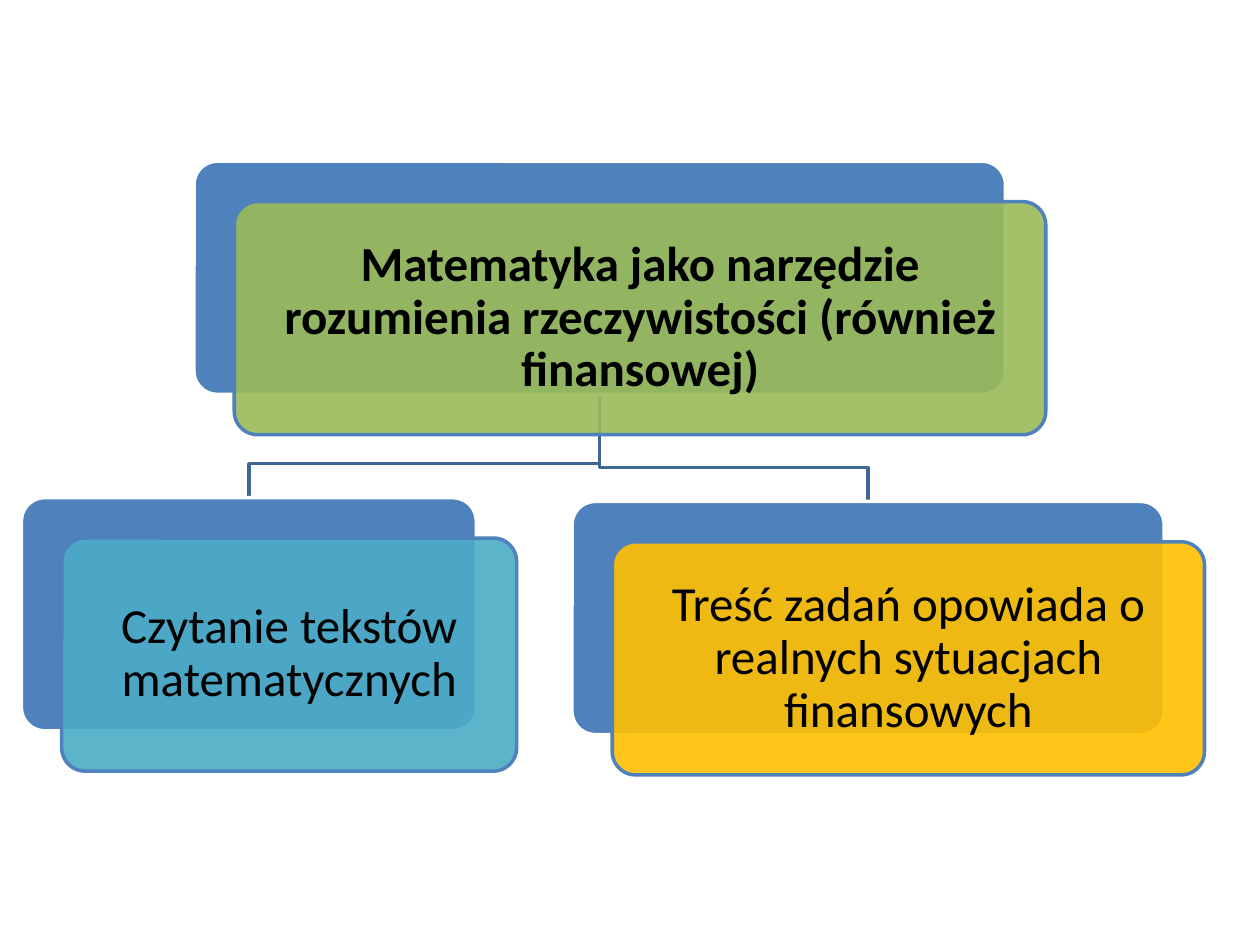
from dataclasses import dataclass

from lxml import etree
from pptx import Presentation
from pptx.dml.color import RGBColor
from pptx.enum.shapes import MSO_SHAPE
from pptx.enum.text import MSO_ANCHOR, PP_ALIGN
from pptx.oxml.ns import qn
from pptx.util import Inches, Pt

ROUNDED = MSO_SHAPE.ROUNDED_RECTANGLE
MIDDLE = MSO_ANCHOR.MIDDLE
CENTER = PP_ALIGN.CENTER

BLACK = RGBColor(0x00, 0x00, 0x00)
WHITE = RGBColor(0xFF, 0xFF, 0xFF)
BLUE = RGBColor(0x4F, 0x81, 0xBD)
DARK_BLUE = RGBColor(0x3F, 0x67, 0x97)
GREEN = RGBColor(0x9B, 0xBB, 0x59)
TEAL = RGBColor(0x4B, 0xAC, 0xC6)
GOLD = RGBColor(0xFF, 0xC0, 0x00)

CARD_HEIGHT = 1.85
CARD_OFFSET = 0.32
BRANCH_DROP = 0.27
INSET = Inches(0.12)
LINE_WIDTH = Pt(2)
FONT_SIZE = 28


@dataclass(frozen=True)
class Node:
    text: str
    left: float
    top: float
    width: float
    color: RGBColor
    bold: bool = False

    @property
    def center(self) -> float:
        return self.left + self.width / 2

    @property
    def bottom(self) -> float:
        return self.top + CARD_HEIGHT


ROOT = Node(
    "Matematyka jako narzędzie rozumienia rzeczywistości (również finansowej)",
    1.54, 1.28, 6.44, GREEN, bold=True,
)
CHILDREN = [
    Node("Treść zadań opowiada o realnych sytuacjach finansowych", 4.54, 3.98, 4.7, GOLD),
    Node("Czytanie tekstów matematycznych", 0.17, 3.95, 3.61, TEAL),
]


def draw_branch(page, parent: Node, child: Node) -> None:
    turn = child.top - BRANCH_DROP
    builder = page.shapes.build_freeform(
        Inches(parent.center), Inches(parent.bottom), scale=1.0
    )
    corners = [(parent.center, turn), (child.center, turn), (child.center, child.top)]
    builder.add_line_segments([(Inches(x), Inches(y)) for x, y in corners], close=False)
    branch = builder.convert_to_shape()
    branch.shadow.inherit = False
    branch.fill.background()
    branch.line.color.rgb = DARK_BLUE
    branch.line.width = LINE_WIDTH


def draw_card(page, node: Node, offset: float, fill: RGBColor, outline: RGBColor):
    card = page.shapes.add_shape(
        ROUNDED,
        Inches(node.left + offset), Inches(node.top + offset),
        Inches(node.width), Inches(CARD_HEIGHT),
    )
    card.adjustments[0] = 0.1
    card.shadow.inherit = False
    card.fill.solid()
    card.fill.fore_color.rgb = fill
    card.line.color.rgb = outline
    card.line.width = LINE_WIDTH
    return card


def set_opacity(card, percent: int) -> None:
    color = card.fill._xPr.find(qn("a:solidFill"))[0]
    etree.SubElement(color, qn("a:alpha")).set("val", str(percent * 1000))


def write_label(card, node: Node) -> None:
    frame = card.text_frame
    frame.word_wrap = True
    frame.vertical_anchor = MIDDLE
    frame.margin_left = frame.margin_right = INSET
    frame.margin_top = frame.margin_bottom = INSET
    para = frame.paragraphs[0]
    para.text = node.text
    para.alignment = CENTER
    para.line_spacing = 0.9
    para.space_after = Pt(0.35 * FONT_SIZE)
    para.font.name = "Calibri"
    para.font.size = Pt(FONT_SIZE)
    para.font.bold = node.bold
    para.font.color.rgb = BLACK


def draw_node(page, node: Node) -> None:
    draw_card(page, node, 0, BLUE, WHITE)
    front = draw_card(page, node, CARD_OFFSET, node.color, BLUE)
    set_opacity(front, 90)
    write_label(front, node)


def main() -> None:
    deck = Presentation()
    deck.slide_width = Inches(10)
    deck.slide_height = Inches(7.5)
    page = deck.slides.add_slide(deck.slide_layouts[6])
    for child in CHILDREN:
        draw_branch(page, ROOT, child)
    for node in [ROOT, *reversed(CHILDREN)]:
        draw_node(page, node)
    deck.save("out.pptx")


if __name__ == "__main__":
    main()
